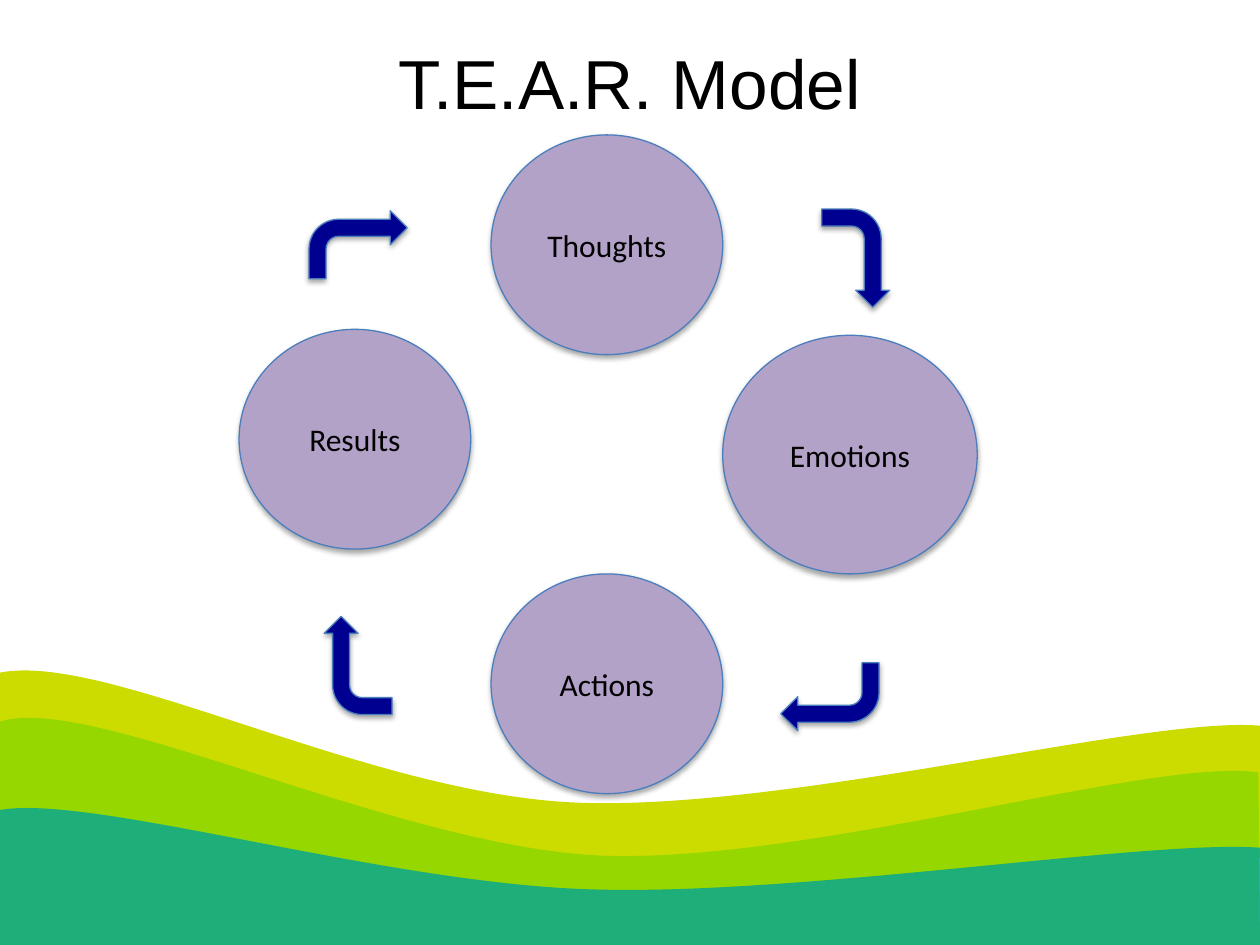
"""Build the T.E.A.R. Model cycle slide."""
from lxml.etree import SubElement
from pptx import Presentation
from pptx.dml.color import RGBColor
from pptx.enum.shapes import MSO_SHAPE as Shape
from pptx.enum.text import MSO_ANCHOR as Anchor, MSO_AUTO_SIZE as AutoSize, PP_ALIGN as Align
from pptx.oxml.ns import qn
from pptx.util import Cm, Pt

TITLE = "T.E.A.R. Model"
STAGES = [
    ("Thoughts", 9.9, 2.72, 4.67, 4.43),
    ("Results", 4.82, 6.64, 4.67, 4.43),
    ("Emotions", 14.57, 6.76, 5.13, 4.81),
    ("Actions", 9.9, 11.57, 4.67, 4.43),
]
ARROWS = [(16.26, 4.52, 90), (6.23, 4.25, 0), (6.23, 12.73, 270), (15.74, 13.36, 180)]
ARROW_SIZE = (1.98, 1.37)
WAVES = [
    ("CCDC00", 100, 17.3, [(0, 13.56), (2.16, 13.13), (7.37, 16), (11.61, 16.18),
                           (15.85, 16.36), (23.11, 14.43), (25.4, 14.63)]),
    ("97D700", 100, 19.05, [(0, 14.55), (1.83, 13.94), (7.92, 17.07), (12.14, 17.25),
                            (16.38, 17.4), (23.16, 15.27), (25.37, 15.57)]),
    ("00A499", 80, 19.05, [(0, 16.33), (1.85, 16), (7.7, 17.81), (11.94, 17.93),
                           (16.15, 18.06), (23.16, 16.92), (25.4, 17.09)]),
]
WIDTH, HEIGHT = 25.4, 19.05


def paint(target, color, opacity=100):
    target.solid()
    target.fore_color.rgb = RGBColor.from_string(color)
    if opacity < 100:
        color_node = target._xPr.find(qn("a:solidFill"))[0]
        SubElement(color_node, qn("a:alpha"), val=str(opacity * 1000))


def write(shape, text, font, size):
    frame = shape.text_frame
    frame.word_wrap = True
    frame.auto_size = AutoSize.NONE
    frame.vertical_anchor = Anchor.MIDDLE
    para = frame.paragraphs[0]
    para.alignment = Align.CENTER
    span = para.add_run()
    span.text = text
    span.font.name = font
    span.font.size = Pt(size)
    paint(span.font.fill, "000000")


def bend(shape, curve_count):
    outline = next(shape._element.iter(qn("a:path")))
    lines = outline.findall(qn("a:lnTo"))
    for first in range(0, 3 * curve_count, 3):
        curve = SubElement(outline, qn("a:cubicBezTo"))
        lines[first].addprevious(curve)
        for line in lines[first:first + 3]:
            curve.append(line[0])
            outline.remove(line)


def add_wave(page, color, opacity, bottom, controls):
    corners = [*controls[1:], (WIDTH, bottom), (0, bottom)]
    builder = page.shapes.build_freeform(*map(Cm, controls[0]))
    builder.add_line_segments([(Cm(x), Cm(y)) for x, y in corners], close=True)
    wave = builder.convert_to_shape()
    bend(wave, len(controls) // 3)
    wave.shadow.inherit = False
    paint(wave.fill, color, opacity)
    wave.line.fill.background()


def add_shaded(page, kind, frame, color):
    shape = page.shapes.add_shape(kind, *map(Cm, frame))
    paint(shape.fill, color)
    paint(shape.line.fill, "4B7EBC")
    shape.line.width = Pt(0.75)
    shape.shadow.inherit = False
    effects = shape._element.spPr.find(qn("a:effectLst"))
    shadow = SubElement(effects, qn("a:outerShdw"), blurRad=str(Pt(3.1)),
                        dist=str(Pt(1.8)), dir="5400000", rotWithShape="0")
    shade = SubElement(shadow, qn("a:srgbClr"), val="000000")
    SubElement(shade, qn("a:alpha"), val="35000")
    return shape


def main():
    deck = Presentation()
    deck.slide_width, deck.slide_height = Cm(WIDTH), Cm(HEIGHT)
    page = deck.slides.add_slide(deck.slide_layouts[5])
    paint(page.background.fill, "FFFFFF")
    for wave in WAVES:
        add_wave(page, *wave)
    title = page.shapes.title
    title.left, title.top, title.width, title.height = map(Cm, (1.27, 0.77, 22.86, 1.76))
    write(title, TITLE, "Arial", 39.6)
    page.shapes._spTree.append(title._element)
    for label, *frame in STAGES:
        write(add_shaded(page, Shape.OVAL, frame, "B3A2C7"), label, "Calibri", 18)
    for left, top, turn in ARROWS:
        arrow = add_shaded(page, Shape.BENT_ARROW, (left, top, *ARROW_SIZE), "000090")
        arrow.rotation = turn
    deck.save("out.pptx")


if __name__ == "__main__":
    main()
